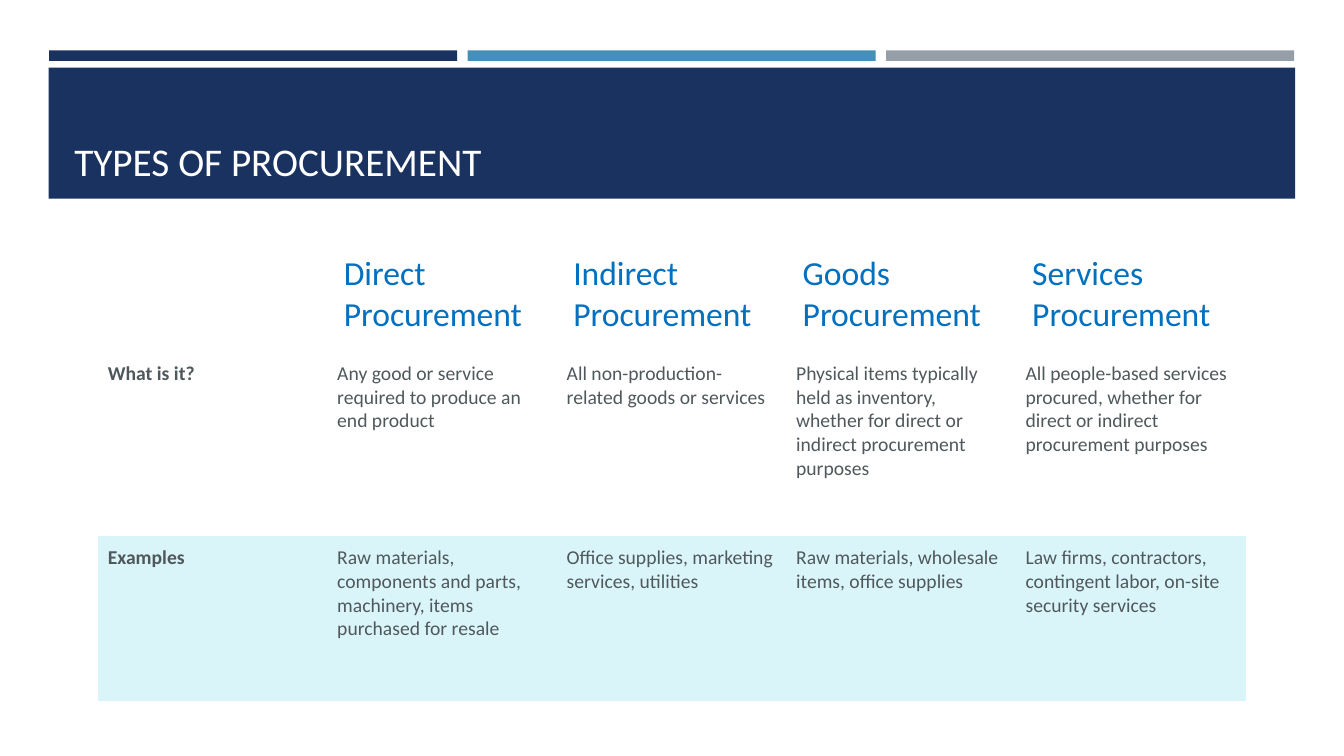
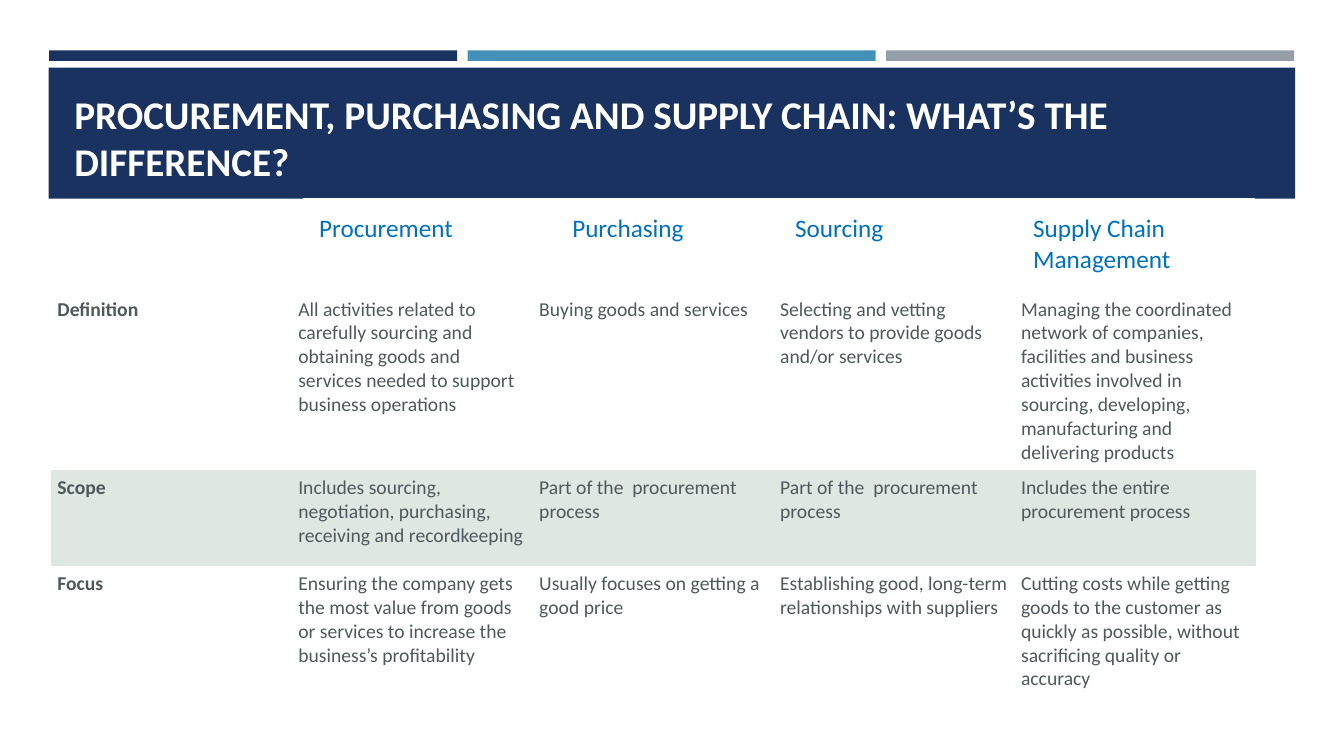
import pptx
import pptx.dml.color
import pptx.enum.shapes
import pptx.enum.text
import pptx.util

Pt = pptx.util.Pt
RGBColor = pptx.dml.color.RGBColor

NAVY = RGBColor(0x1A, 0x32, 0x60)
BLUE = RGBColor(0x45, 0x90, 0xB8)
GREY = RGBColor(0x96, 0x9F, 0xA7)
WHITE = RGBColor(0xFF, 0xFF, 0xFF)
HEADING = RGBColor(0x00, 0x70, 0xC0)
BODY = RGBColor(0x4F, 0x58, 0x5B)
AQUA = RGBColor(0xDA, 0xF5, 0xFA)
SAGE = RGBColor(0xDF, 0xE7, 0xE3)
FONT = "Calibri"
PLAIN_TABLE = "{2D5ABB26-0587-4C30-8999-92F81FD0307C}"


def write(frame, text, size=14, color=BODY, bold=False):
    frame.word_wrap = True
    run = frame.paragraphs[0].add_run()
    run.text = text
    run.font.name = FONT
    run.font.size = Pt(size)
    run.font.bold = bold
    run.font.color.rgb = color


def add_grid(slide, left, top, widths, heights, rows, fills, inset, heading_size=None):
    frame = slide.shapes.add_table(len(rows), len(widths), Pt(left), Pt(top),
                                   Pt(sum(widths)), Pt(sum(heights)))
    grid = frame.table
    grid.first_row = grid.horz_banding = False
    grid._tbl.tblPr[0].text = PLAIN_TABLE
    for column, width in zip(grid.columns, widths):
        column.width = Pt(width)
    for r, (row, height, fill) in enumerate(zip(rows, heights, fills)):
        grid.rows[r].height = Pt(height)
        is_heading = heading_size is not None and r == 0
        margin = Pt(11.5 if is_heading else inset)
        for c, text in enumerate(row):
            cell = grid.cell(r, c)
            cell.fill.solid()
            cell.fill.fore_color.rgb = fill
            cell.margin_left = cell.margin_right = margin
            cell.margin_top = cell.margin_bottom = margin
            if is_heading and text:
                write(cell.text_frame, text, size=heading_size, color=HEADING)
            elif text:
                write(cell.text_frame, text, bold=c == 0)


types_rows = [
    ["", "Direct Procurement", "Indirect Procurement", "Goods Procurement",
     "Services Procurement"],
    ["What is it?",
     "Any good or service required to produce an end product",
     "All non-production-related goods or services",
     "Physical items typically held as inventory, whether for direct or indirect "
     "procurement purposes",
     "All people-based services procured, whether for direct or indirect "
     "procurement purposes"],
    ["Examples",
     "Raw materials, components and parts, machinery, items purchased for resale",
     "Office supplies, marketing services, utilities",
     "Raw materials, wholesale items, office supplies",
     "Law firms, contractors, contingent labor, on-site security services"],
]
difference_headings = [["Procurement", "Purchasing", "Sourcing", "Supply Chain Management"]]
difference_rows = [
    ["Definition",
     "All activities related to carefully sourcing and obtaining goods and services "
     "needed to support business operations",
     "Buying goods and services",
     "Selecting and vetting vendors to provide goods and/or services",
     "Managing the coordinated network of companies, facilities and business activities "
     "involved in sourcing, developing, manufacturing and delivering products"],
    ["Scope",
     "Includes sourcing, negotiation, purchasing, receiving and recordkeeping",
     "Part of the  procurement process",
     "Part of the  procurement process",
     "Includes the entire procurement process"],
    ["Focus",
     "Ensuring the company gets the most value from goods or services to increase "
     "the business’s profitability",
     "Usually focuses on getting a good price",
     "Establishing good, long-term relationships with suppliers",
     "Cutting costs while getting goods to the customer as quickly as possible, "
     "without sacrificing quality or accuracy"],
]

types_grid = dict(left=70.2, top=170, widths=[163.9] * 5, heights=[81.5, 131.5, 118],
                  rows=types_rows, fills=[WHITE, WHITE, AQUA], inset=6.8, heading_size=24)
difference_grid = dict(left=36.5, top=208, widths=[172.1] * 5, heights=[127.6, 68.4, 93.6],
                       rows=difference_rows, fills=[WHITE, SAGE, WHITE], inset=4.5)
heading_grid = dict(left=216.5, top=141.3, widths=[180.8, 159.2, 170, 170], heights=[65.5],
                    rows=difference_headings, fills=[WHITE], inset=4.5, heading_size=18)

pages = [
    ("TYPES OF PROCUREMENT", False, [types_grid]),
    ("PROCUREMENT, PURCHASING AND SUPPLY CHAIN: WHAT’S THE DIFFERENCE?", True,
     [difference_grid, heading_grid]),
]
bands = [(35 + 299 * i, 36, 291.5, 7.5, color) for i, color in enumerate([NAVY, BLUE, GREY])]
bands.append((34.8, 48.4, 890.4, 93.6, NAVY))

deck = pptx.Presentation()
deck.slide_width, deck.slide_height = Pt(960), Pt(540)

for title, title_bold, grids in pages:
    slide = deck.slides.add_slide(deck.slide_layouts[6])
    for left, top, width, height, color in bands:
        band = slide.shapes.add_shape(pptx.enum.shapes.MSO_SHAPE.RECTANGLE,
                                      Pt(left), Pt(top), Pt(width), Pt(height))
        band.shadow.inherit = False
        band.fill.solid()
        band.fill.fore_color.rgb = color
        band.line.fill.background()
    heading = slide.shapes.add_textbox(Pt(46), Pt(55.5), Pt(868), Pt(80)).text_frame
    heading.vertical_anchor = pptx.enum.text.MSO_ANCHOR.BOTTOM
    write(heading, title, size=28, color=WHITE, bold=title_bold)
    for grid in grids:
        add_grid(slide, **grid)

deck.save("out.pptx")
